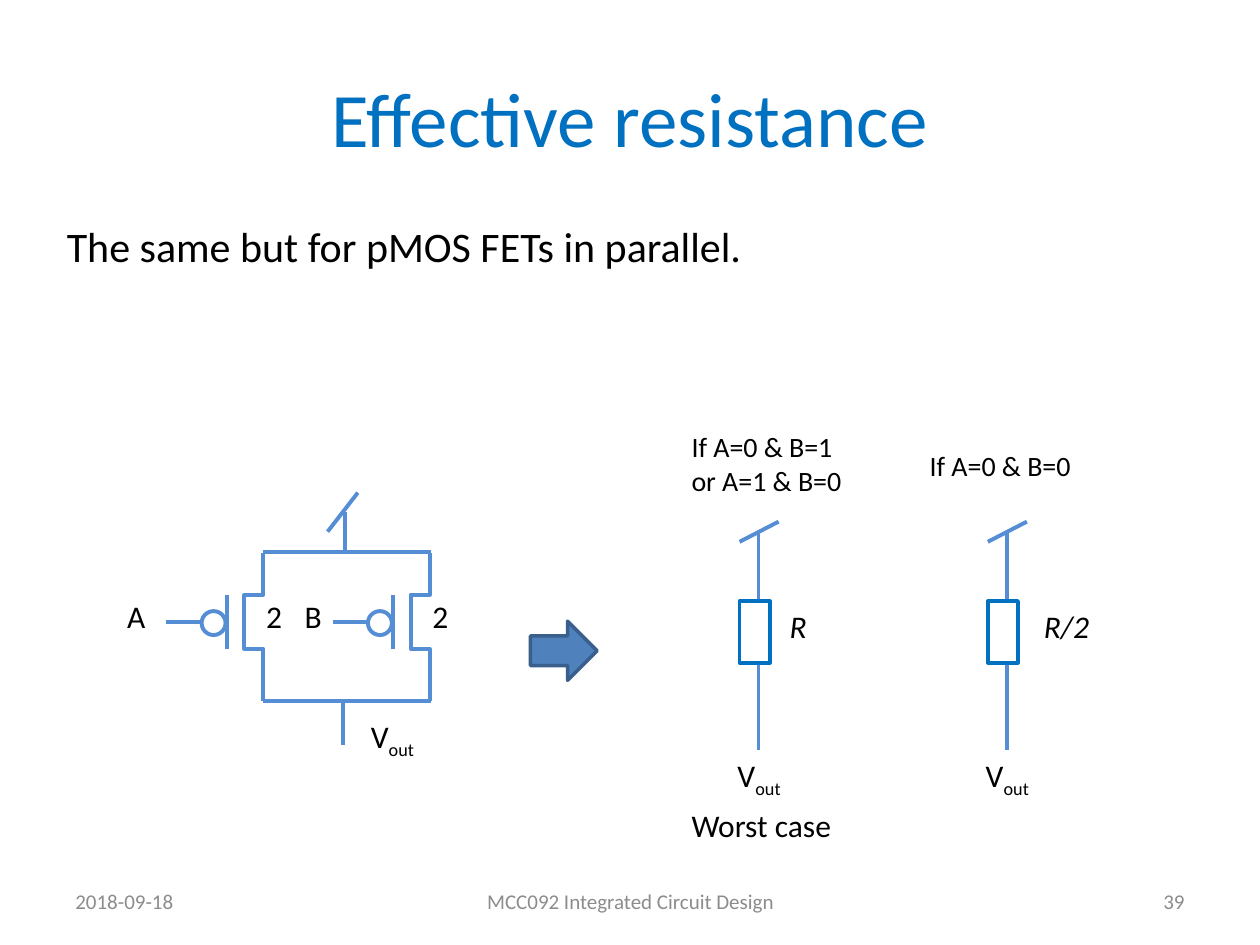
from lxml import etree
from pptx import Presentation
from pptx.dml.color import RGBColor
from pptx.enum.shapes import MSO_CONNECTOR, MSO_SHAPE
from pptx.enum.text import MSO_ANCHOR, PP_ALIGN
from pptx.oxml.ns import qn
from pptx.util import Inches, Pt

COLORS = {
    "title": "0070C0", "text": "000000", "footer": "8C8C8C", "wire": "558ED5",
    "paper": "FFFFFF", "resistor": "0070C0", "arrow": "4F81BD", "arrow_edge": "3A5F8C",
}
# The slide is a grid of 100 columns by 75 rows; all lengths are in cells
COLUMNS, ROWS = 100, 75
WIDTH, HEIGHT = Inches(10), Inches(7.5)
LEFT, CENTER, RIGHT = PP_ALIGN.LEFT, PP_ALIGN.CENTER, PP_ALIGN.RIGHT
LABEL = {"size": Pt(18)}
CAPTION = {"size": Pt(16)}
SYMBOL = {"size": Pt(18), "italic": True}


def col(cells):
    return round(WIDTH * cells / COLUMNS)


def row(cells):
    return round(HEIGHT * cells / ROWS)


def place(box):
    left, top, width, height = box
    return col(left), row(top), col(width), row(height)


def rgb(name):
    return RGBColor.from_string(COLORS[name])


def style_run(run, formats, color="text"):
    for attribute, value in {"name": "Calibri", **formats}.items():
        setattr(run.font, attribute, value)
    run.font.color.rgb = rgb(color)


def add_text(slide, box, lines, formats=LABEL, align=LEFT, color="text", subscript=""):
    frame = slide.shapes.add_textbox(*place(box)).text_frame
    frame.word_wrap = True
    for number, line in enumerate(lines):
        paragraph = frame.add_paragraph() if number else frame.paragraphs[0]
        paragraph.alignment = align
        run = paragraph.add_run()
        run.text = line
        style_run(run, formats, color)
    if subscript:
        run = paragraph.add_run()
        run.text = subscript
        style_run(run, formats, color)
        run._r.get_or_add_rPr().set("baseline", "-25000")
    return frame


def outline(shape, color="wire", width=2.25):
    shape.line.color.rgb = rgb(color)
    shape.line.width = Pt(width)


def add_wire(slide, x1, y1, x2, y2):
    wire = slide.shapes.add_connector(
        MSO_CONNECTOR.STRAIGHT, col(x1), row(y1), col(x2), row(y2))
    outline(wire)
    etree.SubElement(wire._element.spPr, qn("a:effectLst"))


def add_preset(slide, kind, box, fill, edge, width):
    shape = slide.shapes.add_shape(kind, *place(box))
    shape.shadow.inherit = False
    shape.fill.solid()
    shape.fill.fore_color.rgb = rgb(fill)
    outline(shape, edge, width)


def add_output(slide, left, top):
    add_text(slide, (left, top, 6.3, 4), ["V"], align=CENTER, subscript="out")


def add_heading(slide, title, statement):
    heading, body = slide.shapes.title, slide.placeholders[1]
    for holder, box, text, size, color in (
        (heading, (5, 3, 90, 12.5), title, 44, "title"),
        (body, (4.3, 17, 90, 10.2), statement, 24, "text"),
    ):
        holder.left, holder.top, holder.width, holder.height = place(box)
        run = holder.text_frame.paragraphs[0].add_run()
        run.text = text
        style_run(run, {"size": Pt(size)}, color)
    # The statement stands without a bullet
    properties = body.text_frame.paragraphs[0]._p.get_or_add_pPr()
    properties.set("marL", "0")
    properties.set("indent", "0")
    etree.SubElement(properties, qn("a:buNone"))


def add_footer(slide, top, height):
    for left, width, text, align in (
        (5, 23.3, "2018-09-18", LEFT),
        (34.2, 31.7, "MCC092 Integrated Circuit Design", CENTER),
        (71.7, 23.3, "39", RIGHT),
    ):
        frame = add_text(slide, (left, top, width, height), [text],
                         {"size": Pt(12)}, align, "footer")
        frame.vertical_anchor = MSO_ANCHOR.MIDDLE


def add_transistor(slide, left, top, gate_name, name_offset):
    """pMOS FET whose gate bubble starts at left and whose source is at top."""
    gate, bend, channel = left + 2, left + 3.4, left + 4.9
    upper, lower, bottom = top + 3.3, top + 7.6, top + 11.7
    points = [(channel, lower), (bend, lower), (bend, upper), (channel, upper),
              (channel, top)]
    builder = slide.shapes.build_freeform(col(channel), row(bottom), scale=1.0)
    builder.add_line_segments([(col(x), row(y)) for x, y in points], close=False)
    body = builder.convert_to_shape()
    body.shadow.inherit = False
    body.fill.background()
    outline(body)
    add_wire(slide, gate, lower, gate, upper)
    add_wire(slide, left - 2.8, top + 5.5, left, top + 5.5)
    add_preset(slide, MSO_SHAPE.OVAL, (left, top + 4.6, 1.9, 1.9), "paper", "wire", 2.25)
    add_text(slide, (left - name_offset, top + 3, 3.5, 4), [gate_name])
    add_text(slide, (left + 3.4, top + 3, 4.7, 4), ["2"], align=CENTER)


def add_parallel_network(slide, left, top):
    """Two pMOS FETs between a supply mark and the output."""
    rail, floor = top + 4.7, top + 16.5
    first, second = left + 6.9, left + 20.1
    add_wire(slide, left + 18.3, rail, left + 18.3, top + 1.5)
    add_wire(slide, left + 16.9, top + 3.1, left + 19.3, top)
    for level in (rail, floor):
        add_wire(slide, first + 4.9, level, second + 5, level)
    add_transistor(slide, first, top + 4.8, "A", 6.9)
    add_transistor(slide, second, top + 4.8, "B", 6)
    add_wire(slide, left + 18.1, floor, left + 18.1, top + 20)
    add_output(slide, left + 18.9, top + 17.3)


def add_resistor(slide, left, top, value, value_offset):
    """Equivalent resistor from a supply mark at top down to the output."""
    center = left + 3.1
    add_wire(slide, center, top + 0.8, center, top + 18.1)
    add_preset(slide, MSO_SHAPE.RECTANGLE, (left + 1.6, top + 6.3, 2.4, 4.9),
               "paper", "resistor", 2)
    add_wire(slide, left + 1.6, top + 1.6, left + 4.7, top)
    add_text(slide, (left + value_offset, top + 6.3, 6.3, 4), [value], SYMBOL, CENTER)
    add_output(slide, left, top + 18.1)


def main():
    deck = Presentation()
    deck.slide_width, deck.slide_height = WIDTH, HEIGHT
    slide = deck.slides.add_slide(deck.slide_layouts[1])
    add_heading(slide, "Effective resistance", "The same but for pMOS FETs in parallel.")
    add_footer(slide, 69.5, 4)

    # Transistor network and its equivalents
    add_parallel_network(slide, 9.1, 39.1)
    add_preset(slide, MSO_SHAPE.RIGHT_ARROW, (42.1, 49.3, 5.3, 4.7),
               "arrow", "arrow_edge", 2)
    add_resistor(slide, 57.1, 41.4, "R", 3.1)
    add_resistor(slide, 76.8, 41.4, "R/2", 4.7)

    # Input conditions and verdict
    add_text(slide, (53.9, 33.6, 17.3, 6.4), ["If A=0 & B=1", "or A=1 & B=0"], CAPTION)
    add_text(slide, (72.8, 35.1, 17.3, 3.7), ["If A=0 & B=0"], CAPTION)
    add_text(slide, (53.9, 63.5, 13.4, 4), ["Worst case"])
    deck.save("out.pptx")


if __name__ == "__main__":
    main()
